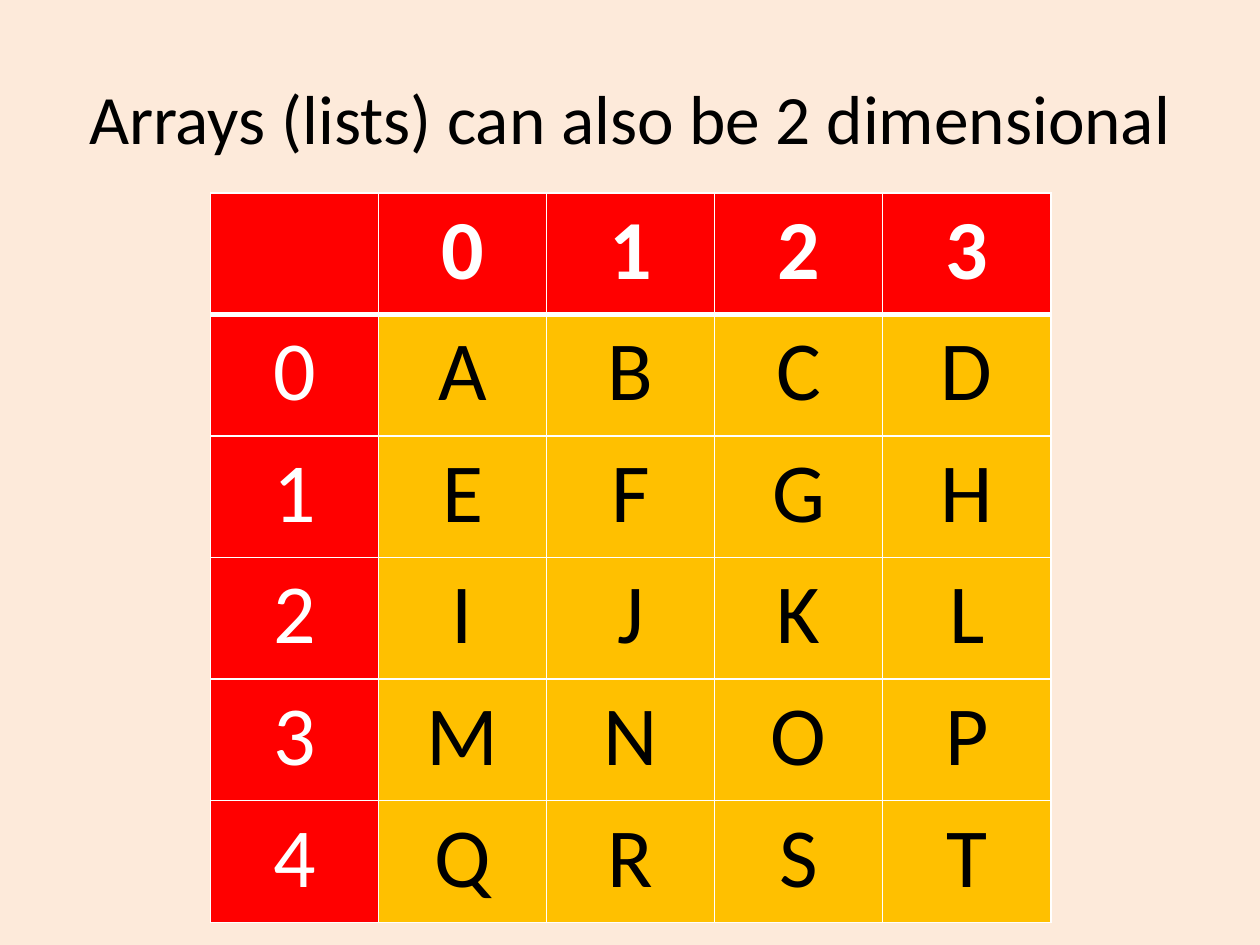
from lxml.etree import SubElement
from pptx import Presentation
from pptx.dml.color import RGBColor
from pptx.enum.text import MSO_ANCHOR as Anchor, PP_ALIGN as Align
from pptx.oxml.ns import qn
from pptx.util import Inches, Pt

HEADERS = ["", "0", "1", "2", "3"]
LETTER_ROWS = ["ABCD", "EFGH", "IJKL", "MNOP", "QRST"]
RED, AMBER, WHITE, BLACK = "FF0000", "FFC000", "FFFFFF", "000000"


def set_fill(fill, color):
    """Fill solidly with a hex colour."""
    fill.solid()
    fill.fore_color.rgb = RGBColor.from_string(color)


def style_text(paragraph, size, color, bold=False):
    """Centre a paragraph and set its font."""
    paragraph.alignment = Align.CENTER
    font = paragraph.font
    font.name, font.size, font.bold = "Calibri", Pt(size), bold
    set_fill(font.fill, color)


def add_borders(cell, top, bottom):
    """Draw white cell borders; top and bottom widths are in points."""
    properties = cell._tc.get_or_add_tcPr()
    sides = [("lnL", 1), ("lnR", 1), ("lnT", top), ("lnB", bottom)]
    for position, (side, width) in enumerate(sides):
        line = SubElement(properties, qn(f"a:{side}"), w=str(Pt(width)))
        properties.insert(position, line)
        solid = SubElement(line, qn("a:solidFill"))
        SubElement(solid, qn("a:srgbClr"), val=WHITE)


def place_title(slide, left, top, width, height):
    """Place the heading in the title placeholder."""
    title = slide.shapes.title
    title.left, title.top, title.width, title.height = left, top, width, height
    frame = title.text_frame
    frame.text = "Arrays (lists) can also be 2 dimensional"
    frame.word_wrap = True
    frame.vertical_anchor = Anchor.MIDDLE
    style_text(frame.paragraphs[0], 39.6, BLACK)


def place_array(slide, left, top, width, height):
    """Place the letter grid with its row and column indexes."""
    rows = [HEADERS] + [[str(index), *letters] for index, letters in enumerate(LETTER_ROWS)]
    table = slide.shapes.add_table(len(rows), len(HEADERS), left, top, width, height).table
    for r, row in enumerate(rows):
        for c, value in enumerate(row):
            is_index = r == 0 or c == 0
            cell = table.cell(r, c)
            cell.text = value
            set_fill(cell.fill, RED if is_index else AMBER)
            add_borders(cell, 3 if r == 1 else 1, 3 if r == 0 else 1)
            style_text(cell.text_frame.paragraphs[0], 48, WHITE if is_index else BLACK, r == 0)


def main():
    """Build and save the slide."""
    deck = Presentation()
    deck.slide_width, deck.slide_height = Inches(10), Inches(7.5)
    slide = deck.slides.add_slide(deck.slide_layouts[5])
    set_fill(slide.background.fill, "FDEADA")
    place_title(slide, Inches(0.5), Inches(0.3), Inches(9), Inches(1.25))
    place_array(slide, Inches(1.67), Inches(1.53), Inches(6.67), Inches(5.79))
    deck.save("out.pptx")


if __name__ == "__main__":
    main()
